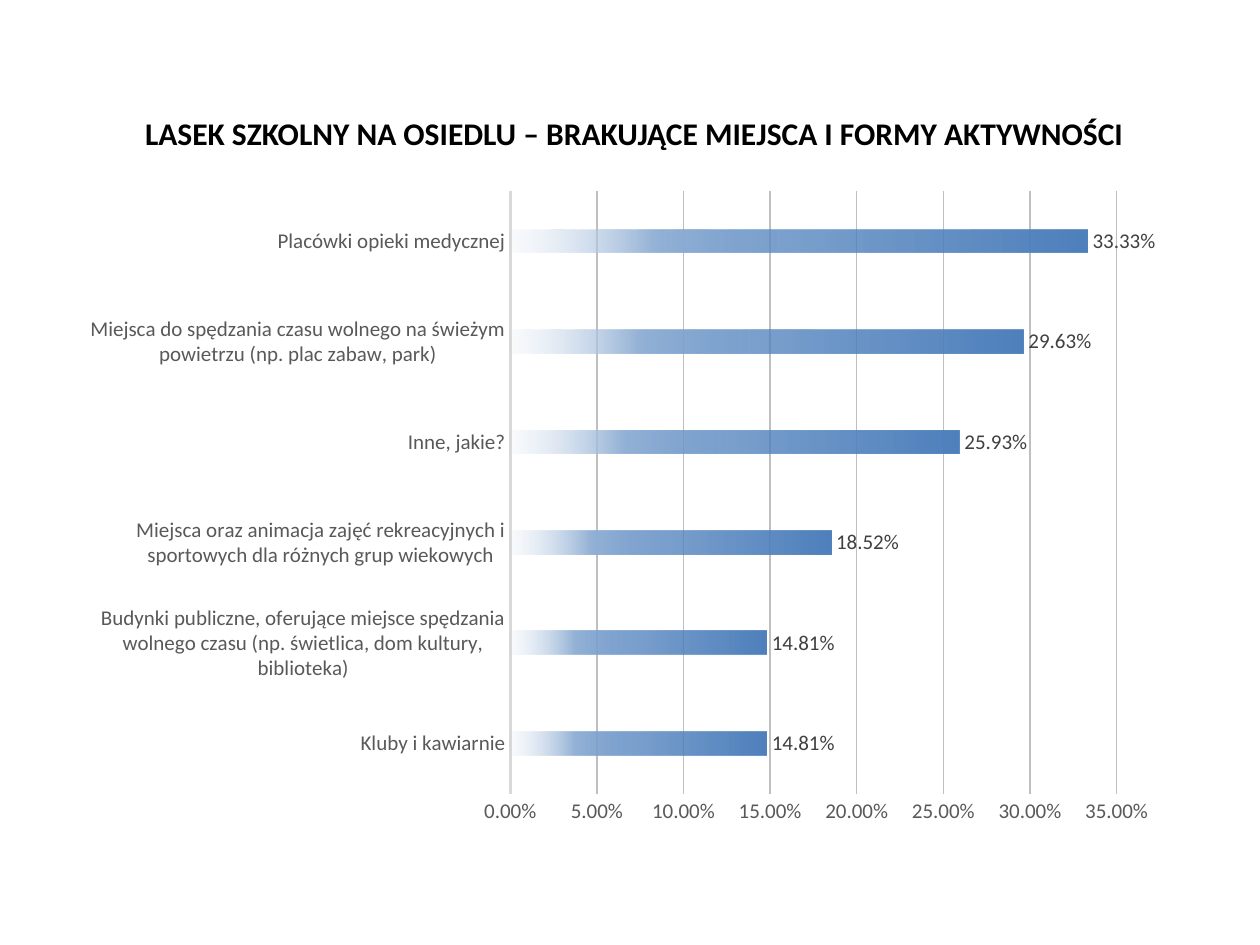
from lxml.etree import SubElement
from pptx import Presentation
from pptx.chart.data import CategoryChartData
from pptx.dml.color import RGBColor
from pptx.enum.chart import XL_CHART_TYPE, XL_LABEL_POSITION, XL_TICK_MARK
from pptx.enum.text import PP_ALIGN
from pptx.oxml import parse_xml
from pptx.oxml.ns import nsdecls, qn
from pptx.util import Inches, Pt

FONT = "Calibri"
ANSWERS = [
    ("Kluby i kawiarnie", 0.1481),
    ("Budynki publiczne, oferujące miejsce spędzania\n"
     "wolnego czasu (np. świetlica, dom kultury,\nbiblioteka)", 0.1481),
    ("Miejsca oraz animacja zajęć rekreacyjnych i\n"
     "sportowych dla różnych grup wiekowych", 0.1852),
    ("Inne, jakie?", 0.2593),
    ("Miejsca do spędzania czasu wolnego na świeżym\n"
     "powietrzu (np. plac zabaw, park)", 0.2963),
    ("Placówki opieki medycznej", 0.3333),
]
# position %, colour, opacity %
BAR_STOPS = [(0, "4F81BD", 100), (51, "4F81BD", 75),
             (75, "95B3D7", 100), (100, "DCE6F2", 15)]
PLOT_SHARES = {"x": 0.4, "y": 0.02, "w": 0.55, "h": 0.915}


def rgb(value):
    return RGBColor.from_string(value)


def style_font(font, size, color, bold=False):
    font.name, font.size, font.bold = FONT, Pt(size), bold
    font.color.rgb = rgb(color)


def add_text(slide, text, box, size=18, color="000000", bold=False, align=PP_ALIGN.CENTER):
    sp = slide.shapes.add_textbox(*map(Inches, box))
    tf = sp.text_frame
    tf.word_wrap = True
    p = tf.paragraphs[0]
    p.alignment = align
    r = p.add_run()
    r.text = text
    style_font(r.font, size, color, bold)


def fill_gradient(series, stops, angle):
    """Fill the bars with any number of stops, each with its own opacity."""
    fill = series.format.fill
    fill.gradient()
    fill.gradient_angle = angle
    stop_list = next(series._element.iter(qn("a:gsLst")))
    for old in list(stop_list):
        stop_list.remove(old)
    for position, color, opacity in stops:
        gs = SubElement(stop_list, qn("a:gs"), pos=str(position * 1000))
        clr = SubElement(gs, qn("a:srgbClr"), val=color)
        if opacity < 100:
            SubElement(clr, qn("a:alpha"), val=str(opacity * 1000))


def place_plot(chart, shares):
    """Fix the inner plot area at shares of the chart's size."""
    area = next(chart._chartSpace.iter(qn("c:plotArea")))
    for old in area.findall(qn("c:layout")):
        area.remove(old)
    sizes = "".join(f'<c:{k} val="{v}"/>' for k, v in shares.items())
    area.insert(0, parse_xml(
        f'<c:layout {nsdecls("c")}><c:manualLayout><c:layoutTarget val="inner"/>'
        f'<c:xMode val="edge"/><c:yMode val="edge"/>{sizes}</c:manualLayout></c:layout>'))


def style_axes(chart):
    for axis in (chart.category_axis, chart.value_axis):
        axis.major_tick_mark = axis.minor_tick_mark = XL_TICK_MARK.NONE
        style_font(axis.tick_labels.font, 12, "595959")
    line = chart.category_axis.format.line
    line.color.rgb, line.width = rgb("D9D9D9"), Pt(1.5)
    values = chart.value_axis
    values.minimum_scale, values.maximum_scale, values.major_unit = 0, 0.35, 0.05
    values.format.line.fill.background()
    values.tick_labels.number_format = "0.00%"
    values.tick_labels.number_format_is_linked = False
    grid = values.major_gridlines.format.line
    grid.color.rgb, grid.width = rgb("BFBFBF"), Pt(0.75)


def add_bar_chart(slide, answers, box):
    data = CategoryChartData(number_format="0.00%")
    data.categories = [name for name, _ in answers]
    data.add_series("Series 1", [share for _, share in answers])
    chart = slide.shapes.add_chart(
        XL_CHART_TYPE.BAR_CLUSTERED, *map(Inches, box), data).chart
    chart.has_legend = chart.has_title = False
    style_font(chart.font, 10, "000000")
    style_axes(chart)
    place_plot(chart, PLOT_SHARES)
    plot = chart.plots[0]
    plot.gap_width, plot.overlap, plot.vary_by_categories = 326, -58, False
    series = plot.series[0]
    series.invert_if_negative = False
    fill_gradient(series, BAR_STOPS, 180)
    labels = series.data_labels
    labels.show_value = True
    labels.position = XL_LABEL_POSITION.OUTSIDE_END
    labels.number_format, labels.number_format_is_linked = "0.00%", False
    style_font(labels.font, 12, "404040")


def main():
    prs = Presentation()
    prs.slide_width, prs.slide_height = Inches(10), Inches(7.5)
    slide = prs.slides.add_slide(prs.slide_layouts[6])
    add_text(slide, "LASEK SZKOLNY NA OSIEDLU – BRAKUJĄCE MIEJSCA I FORMY AKTYWNOŚCI",
             (0.31, 0.86, 9.45, 0.4), bold=True)
    add_bar_chart(slide, ANSWERS, (0.55, 1.41, 8.75, 5.23))
    prs.save("out.pptx")


if __name__ == "__main__":
    main()
